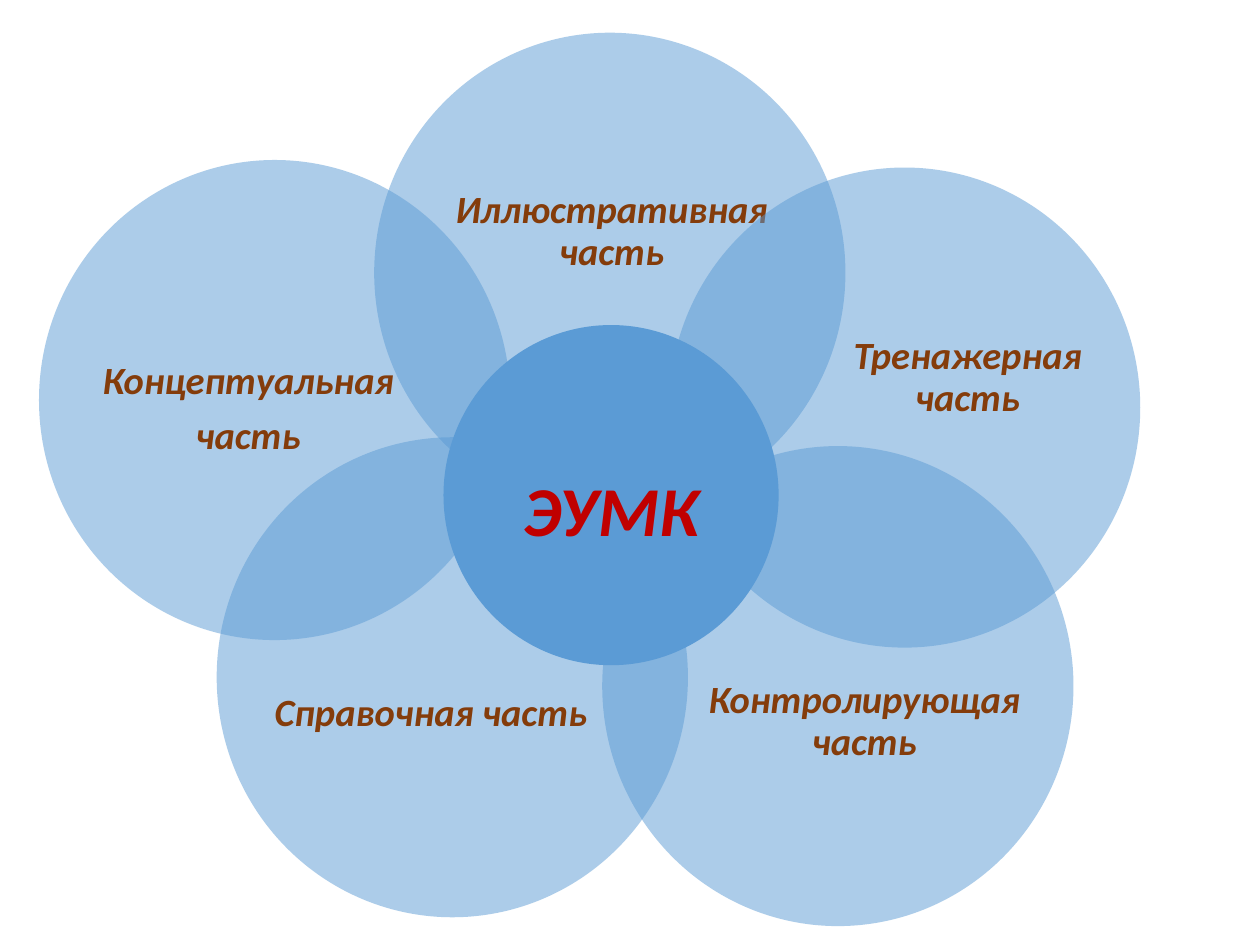
"""Build a slide with five overlapping petals around a central circle."""
from lxml import etree
from pptx import Presentation
from pptx.dml.color import RGBColor
from pptx.enum import shapes, text
from pptx.oxml import ns
from pptx.util import Inches, Pt

COLORS = {"circle": "5B9BD5", "label": "843C0B", "center": "C00000"}
PETAL_SIZE = (3.74, 3.81)
PETALS = [
    ((2.97, 0.26), (3.44, 1.02, 2.83, 1.64), ["Иллюстративная часть"]),
    ((5.31, 1.33), (6.41, 2.11, 2.54, 1.78), ["Тренажерная часть"]),
    ((4.78, 3.54), (5.59, 4.84, 2.54, 1.78), ["Контролирующая часть"]),
    ((1.72, 3.47), (2.15, 4.78, 2.54, 1.78), ["Справочная часть"]),
    ((0.31, 1.27), (0.7, 2.36, 2.54, 1.78), ["Концептуальная", "часть"]),
]
CENTER = ((3.52, 2.58, 2.66, 2.7), "ЭУМК")


def add_circle(slide, box, alpha=None):
    sp = slide.shapes.add_shape(shapes.MSO_SHAPE.OVAL, *map(Inches, box))
    sp.shadow.inherit = False
    sp.fill.solid()
    sp.fill.fore_color.rgb = RGBColor.from_string(COLORS["circle"])
    sp.line.fill.background()
    if alpha is not None:
        color = sp.fill._xPr.find(".//" + ns.qn("a:srgbClr"))
        etree.SubElement(color, ns.qn("a:alpha"), val=str(alpha * 1000))
    return sp


def write(tf, lines, size, color, anchor, spacing=1.0, after=0):
    tf.word_wrap = True
    tf.vertical_anchor = anchor
    for i, line in enumerate(lines):
        p = tf.add_paragraph() if i else tf.paragraphs[0]
        p.alignment = text.PP_ALIGN.CENTER
        p.line_spacing = spacing
        p.space_after = Pt(after)
        r = p.add_run()
        r.text = line
        r.font.name = "Calibri"
        r.font.size = Pt(size)
        r.font.bold = r.font.italic = True
        r.font.color.rgb = RGBColor.from_string(COLORS[color])


def main():
    prs = Presentation()
    prs.slide_width, prs.slide_height = Inches(10), Inches(7.5)
    slide = prs.slides.add_slide(prs.slide_layouts[6])

    for corner, label_box, lines in PETALS:
        add_circle(slide, corner + PETAL_SIZE, alpha=50)
        tf = slide.shapes.add_textbox(*map(Inches, label_box)).text_frame
        tf.margin_left = tf.margin_right = tf.margin_top = tf.margin_bottom = 0
        write(tf, lines, 22, "label", text.MSO_ANCHOR.MIDDLE, spacing=0.9, after=7.7)

    box, name = CENTER
    tf = add_circle(slide, box).text_frame
    tf.margin_top = Inches(0.73)
    write(tf, [name], 40, "center", text.MSO_ANCHOR.TOP)

    prs.save("out.pptx")


if __name__ == "__main__":
    main()
